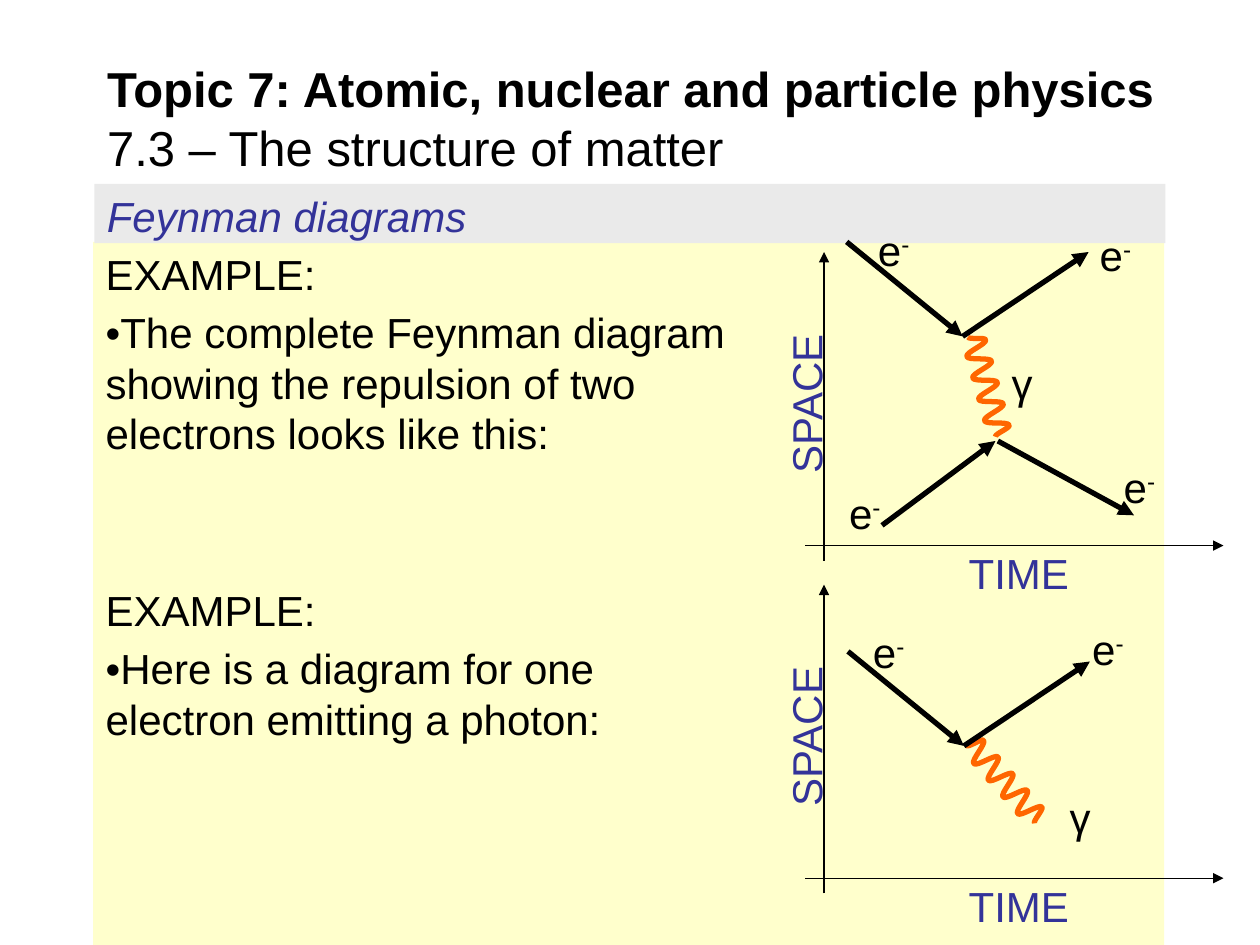
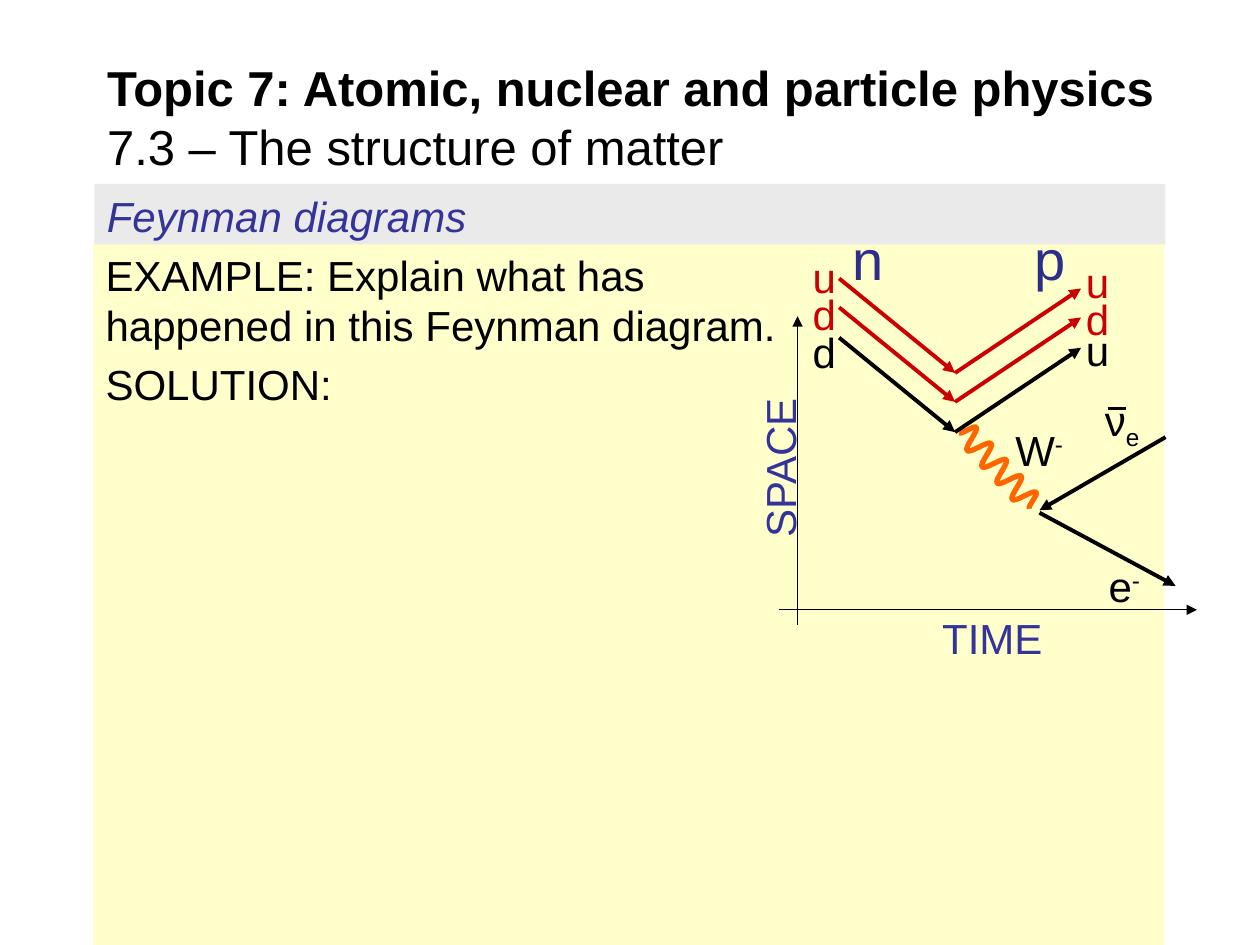
import lxml.etree
import pptx
import pptx.dml.color
import pptx.enum.shapes
import pptx.enum.text
import pptx.oxml.ns
import pptx.util

EMU_PER_PX = 9144
BLACK = "000000"
INDIGO = "333399"
NAVY = "2D2D8A"
RED = "CC0000"
ORANGE = "FF6600"
CREAM = "FFFFCC"
SILVER = "EAEAEA"


def px(length):
    return pptx.util.Emu(round(length * EMU_PER_PX))


def colour(code):
    return pptx.dml.color.RGBColor.from_string(code)


def assign(target, values):
    for name, value in values.items():
        setattr(target, name, value)


def add_child(parent, tag, **attributes):
    return lxml.etree.SubElement(parent, pptx.oxml.ns.qn(tag), **attributes)


def curve_segments(shape):
    point_tag = pptx.oxml.ns.qn("a:pt")
    outline = next(shape._element.iter(pptx.oxml.ns.qn("a:path")))
    previous = None
    for segment in list(outline):
        point = segment.find(point_tag)
        x, y = int(point.get("x")), int(point.get("y"))
        if previous:
            start_x, start_y = previous
            pull = round((x - start_x) * 0.4)
            curve = add_child(outline, "a:cubicBezTo")
            for control_x, control_y in ((start_x + pull, start_y), (x - pull, y), (x, y)):
                add_child(curve, "a:pt", x=str(control_x), y=str(control_y))
            outline.replace(segment, curve)
        previous = (x, y)


class FeynmanDeck:
    font_name = "Arial"
    text_size = 24
    title_size = 28
    top = pptx.enum.text.MSO_ANCHOR.TOP
    middle = pptx.enum.text.MSO_ANCHOR.MIDDLE
    left = pptx.enum.text.PP_ALIGN.LEFT
    no_fit = pptx.enum.text.MSO_AUTO_SIZE.NONE
    grow = pptx.enum.text.MSO_AUTO_SIZE.SHAPE_TO_FIT_TEXT

    def __init__(self):
        self.deck = pptx.Presentation()
        assign(self.deck, {"slide_width": px(1000), "slide_height": px(750)})
        self.page = None

    def start_page(self, title_top, body_top, text_right, paragraphs):
        self.page = self.deck.slides.add_slide(self.deck.slide_layouts[5])
        body = self.panel(74, body_top, 850, 750 - body_top, CREAM)
        body.text_frame.margin_right = px(924 - text_right)
        self.paragraphs(body, paragraphs)
        band = self.panel(75, 146, 850, body_top - 145, SILVER)
        self.span(band.text_frame.paragraphs[0], "Feynman diagrams", INDIGO, italic=True)
        self.title(title_top)

    def title(self, top):
        box = self.page.shapes.title
        assign(box, {"left": px(75), "top": px(top), "width": px(895), "height": px(91)})
        assign(box.text_frame, {"word_wrap": True, "auto_size": self.no_fit,
                                "vertical_anchor": self.middle})
        para = box.text_frame.paragraphs[0]
        para.alignment = self.left
        self.span(para, "Topic 7: Atomic, nuclear and particle physics",
                  size=self.title_size, bold=True)
        para.add_line_break()
        self.span(para, "7.3 – The structure of matter", size=self.title_size, bold=False)

    def panel(self, x, y, width, height, fill):
        box = self.page.shapes.add_shape(pptx.enum.shapes.MSO_SHAPE.RECTANGLE,
                                         px(x), px(y), px(width), px(height))
        box.shadow.inherit = False
        box.fill.solid()
        box.fill.fore_color.rgb = colour(fill)
        box.line.fill.background()
        assign(box.text_frame, {"word_wrap": True, "vertical_anchor": self.top})
        box.text_frame.paragraphs[0].alignment = self.left
        return box

    def paragraphs(self, box, entries):
        frame = box.text_frame
        for index, (space, text) in enumerate(entries):
            para = frame.add_paragraph() if index else frame.paragraphs[0]
            assign(para, {"alignment": self.left, "space_before": pptx.util.Pt(space)})
            self.span(para, text)

    def span(self, para, text, code=BLACK, size=text_size, baseline=0, **formats):
        span = para.add_run()
        span.text = text
        assign(span.font, {"name": self.font_name, "size": pptx.util.Pt(size), **formats})
        span.font.color.rgb = colour(code)
        if baseline:
            span.font._element.set("baseline", str(baseline * 1000))

    def label(self, x, y, width, text, code=BLACK, size=text_size,
              script="", baseline=30, height=50, rotation=0):
        box = self.page.shapes.add_textbox(px(x), px(y), px(width), px(height))
        box.rotation = rotation
        assign(box.text_frame, {"word_wrap": True, "auto_size": self.grow})
        para = box.text_frame.paragraphs[0]
        self.span(para, text, code, size)
        if script:
            self.span(para, script, code, size, baseline)

    def electron(self, x, y):
        self.label(x, y, 63, "e", script="-")

    def line(self, start, end, width, code=BLACK, arrow=True):
        connector = self.page.shapes.add_connector(
            pptx.enum.shapes.MSO_CONNECTOR.STRAIGHT,
            *(px(value) for value in (*start, *end)))
        self.stroke(connector, width, code)
        if arrow:
            add_child(connector.line._get_or_add_ln(), "a:tailEnd", type="triangle")
        add_child(connector._element.spPr, "a:effectLst")

    def stroke(self, shape, width, code):
        shape.line.color.rgb = colour(code)
        shape.line.width = pptx.util.Pt(width)

    def axes(self, x, y):
        self.line((x, y + 12), (x, y - 233), 0.75)
        self.line((x - 15, y), (x + 317, y), 0.75)
        self.label(x - 89, y - 147, 149, "SPACE", INDIGO, rotation=270)
        self.label(x + 105, y - 3, 106, "TIME", INDIGO)

    def deflection(self, x, y, width, code=BLACK):
        vertex = (x + 92, y + 75)
        self.line((x, y), vertex, width, code)
        self.line(vertex, (x + 192, y + 8), width, code)

    def boson(self, centre_x, centre_y, angle):
        reach, swing, half_period, tail = 41, 9, 8.8, 4
        crests = [(turn * half_period, swing if turn % 2 else -swing)
                  for turn in range(-4, 5)]
        points = [(px(centre_x + along), px(centre_y + across))
                  for along, across in [(-reach, tail), *crests, (reach, tail)]]
        builder = self.page.shapes.build_freeform(*points[0])
        builder.add_line_segments(points[1:], close=False)
        wave = builder.convert_to_shape()
        curve_segments(wave)
        wave.shadow.inherit = False
        wave.fill.background()
        self.stroke(wave, 3, ORANGE)
        wave.rotation = angle


def add_electron_page(board):
    board.start_page(48, 192, 597, [
        (0, "EXAMPLE:"),
        (4.8, "•The complete Feynman diagram showing the repulsion of two "
              "electrons looks like this:"),
        (72, "EXAMPLE:"),
        (4.8, "•Here is a diagram for one electron emitting a photon:"),
    ])
    for centre_x, centre_y, angle in ((783, 306, 74.6), (797, 620, 48.8)):
        board.boson(centre_x, centre_y, angle)
    board.line((700, 417), (790, 350), 3)
    board.line((792, 350), (900, 409), 3)
    for origin_y in (433, 697):
        board.axes(654, origin_y)
    for x, y in ((672, 192), (673, 517)):
        board.deflection(x, y, 3)
    for x, y in ((664, 382), (882, 361), (683, 492), (857, 490), (687, 173), (863, 177)):
        board.electron(x, y)
    for x, y in ((793, 279), (839, 623)):
        board.label(x, y, 48, "γ")


def add_decay_page(board):
    board.start_page(47, 193, 640, [
        (0, "EXAMPLE: Explain what has happened in this Feynman diagram."),
        (4.8, "SOLUTION:"),
    ])
    board.boson(792, 371, 47.3)
    board.line((925, 347), (825, 405), 2.25)
    board.line((825, 407), (933, 465), 2.25)
    board.axes(633, 484)
    board.electron(870, 440)
    board.label(867, 308, 67, "ν", script="e", baseline=-25)
    board.label(796, 332, 77, "W", script="-")
    board.line((879, 324), (894, 324), 1.5, arrow=False)
    quarks = (
        (268, BLACK, "d", 254, "u", 253),
        (244, RED, "d", 224, "d", 228),
        (221, RED, "u", 195, "u", 199),
    )
    for y, code, before, before_y, after, after_y in quarks:
        board.deflection(666, y, 2.25, code)
        board.label(635, before_y, 48, before, code)
        board.label(852, after_y, 48, after, code)
    for x, nucleon in ((667, "n"), (811, "p")):
        board.label(x, 173, 41, nucleon, NAVY, 32, height=64)


def main():
    board = FeynmanDeck()
    add_electron_page(board)
    add_decay_page(board)
    board.deck.save("out.pptx")


if __name__ == "__main__":
    main()
